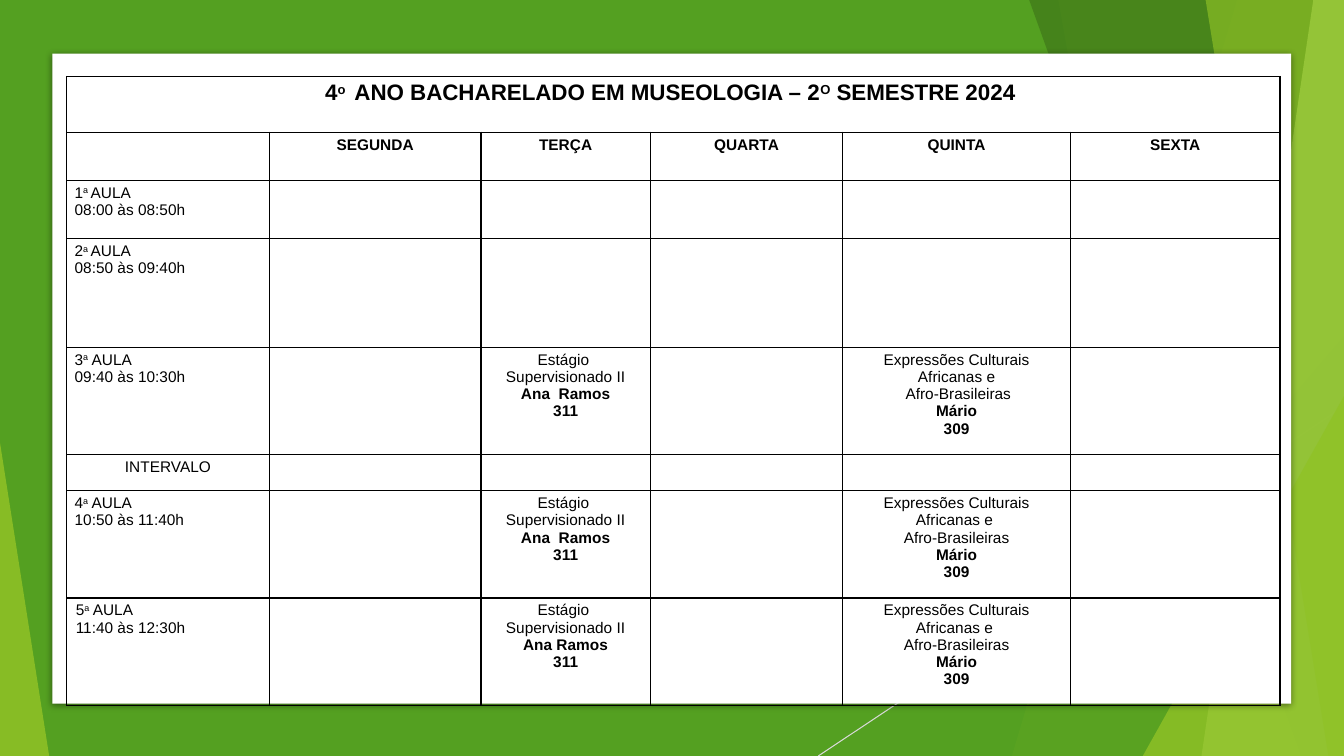
from dataclasses import dataclass

from lxml import etree
from pptx import Presentation
from pptx.dml.color import RGBColor
from pptx.enum.shapes import MSO_CONNECTOR, MSO_SHAPE
from pptx.enum.text import PP_ALIGN
from pptx.oxml.ns import qn
from pptx.util import Cm, Pt

STRAIGHT = MSO_CONNECTOR.STRAIGHT
RECTANGLE = MSO_SHAPE.RECTANGLE
TRIANGLE = MSO_SHAPE.ISOSCELES_TRIANGLE
LEFT = PP_ALIGN.LEFT
CENTER = PP_ALIGN.CENTER

WIDTH, HEIGHT = 33.87, 19.05
BLANK_LAYOUT = 6


@dataclass(frozen=True)
class Theme:
    font: str = "Arial"
    black: str = "000000"
    white: str = "FFFFFF"
    green: str = "54A021"
    lime: str = "90C226"
    dark_green: str = "3F7819"
    pale_lime: str = "C0E474"
    grey: str = "D9D9D9"
    title_size: float = 16
    text_size: float = 11
    hairline: float = 0.75
    border: float = 1


THEME = Theme()

COLUMN_WIDTHS = (5.11, 5.33, 4.27, 4.85, 5.74, 5.28)
ROW_HEIGHTS = (1.4, 1.22, 1.47, 2.74, 2.7, 0.91, 2.7, 2.7)
TITLE = "4^o ^ ANO BACHARELADO EM MUSEOLOGIA – 2^O^ SEMESTRE 2024 "
DAYS = ("SEGUNDA", "TERÇA", "QUARTA", "QUINTA", "SEXTA")
PERIODS = {
    2: ("1^a ^AULA", "08:00 às 08:50h"),
    3: ("2^a ^AULA", "08:50 às 09:40h"),
    4: ("3^a^ AULA", "09:40 às 10:30h"),
    6: ("4^a^ AULA", "10:50 às 11:40h"),
    7: ("5^a^ AULA", "11:40 às 12:30h"),
}
BREAK_ROW = 5
TUESDAY, THURSDAY = 2, 4
INTERNSHIP = ("Estágio ", "Supervisionado II")
INTERNSHIP_STAFF = {4: "Ana  Ramos", 6: "Ana  Ramos", 7: "Ana Ramos"}
CULTURES = ("Expressões Culturais Africanas e ", "Afro-Brasileiras")
CULTURES_FIRST = ("Expressões Culturais Africanas e", " Afro-Brasileiras")

FACETS = (
    (31.19, 25.5, THEME.lime, 30),
    (26.67, 30.05, THEME.lime, 20),
    (24.82, 8.46, 9.05, 10.59, 1, THEME.green, 72),
    (25.93, 32.79, THEME.dark_green, 70),
    (33.1, 30.28, THEME.pale_lime, 70),
    (30.38, 33.48, THEME.lime, 65),
    (28.8, 9.98, 5.07, 9.07, 1, THEME.lime, 80),
    (0, 11.15, 1.24, 7.9, 0, THEME.lime, 85),
)


def write(paragraph, text, size=THEME.text_size, bold=False, color=THEME.black, align=CENTER):
    paragraph.alignment = align
    for position, piece in enumerate(text.split("^")):
        if not piece:
            continue
        run = paragraph.add_run()
        run.text = piece
        run.font.name = THEME.font
        run.font.size = Pt(size)
        run.font.bold = bold
        run.font.color.rgb = RGBColor.from_string(color)
        if position % 2:
            run._r.get_or_add_rPr().set("baseline", "30000")
    if not text:
        etree.SubElement(paragraph._p, qn("a:endParaRPr"), sz=str(int(size * 100)))


class SlideBuilder:
    def __init__(self, slide, theme):
        self.slide = slide
        self.theme = theme

    def paint(self, shape, color, opacity=100):
        shape.shadow.inherit = False
        shape.fill.solid()
        shape.fill.fore_color.rgb = RGBColor.from_string(color)
        shape.line.fill.background()
        if opacity < 100:
            tint = shape._element.spPr.find(f".//{qn('a:srgbClr')}")
            etree.SubElement(tint, qn("a:alpha"), val=str(opacity * 1000))
        return shape

    def box(self, kind, left, top, width, height, color, opacity=100):
        shape = self.slide.shapes.add_shape(kind, Cm(left), Cm(top), Cm(width), Cm(height))
        return self.paint(shape, color, opacity)

    def triangle(self, left, top, width, height, apex, color, opacity):
        shape = self.box(TRIANGLE, left, top, width, height, color, opacity)
        shape.adjustments[0] = apex

    def band(self, top_left, bottom_left, color, opacity):
        top = Cm(-0.02)
        builder = self.slide.shapes.build_freeform(Cm(top_left), top)
        corners = ((Cm(WIDTH), top), (Cm(WIDTH), Cm(HEIGHT)), (Cm(bottom_left), Cm(HEIGHT)))
        builder.add_line_segments(corners, close=True)
        self.paint(builder.convert_to_shape(), color, opacity)

    def line(self, start, end):
        ends = [Cm(value) for value in (*start, *end)]
        connector = self.slide.shapes.add_connector(STRAIGHT, *ends)
        connector.line.color.rgb = RGBColor.from_string(self.theme.grey)
        connector.line.width = Pt(self.theme.hairline)
        etree.SubElement(connector._element.spPr, qn("a:effectLst"))

    def card(self, left, top, width, height):
        shape = self.box(RECTANGLE, left, top, width, height, self.theme.white)
        effects = shape._element.spPr.find(qn("a:effectLst"))
        shadow = etree.SubElement(effects, qn("a:outerShdw"), blurRad=str(Pt(5)),
                                  dist=str(Pt(1.4)), dir="5400000", rotWithShape="0")
        tint = etree.SubElement(shadow, qn("a:srgbClr"), val=self.theme.black)
        etree.SubElement(tint, qn("a:alpha"), val="43000")

    def table(self, left, top):
        frame = self.slide.shapes.add_table(
            len(ROW_HEIGHTS), len(COLUMN_WIDTHS), Cm(left), Cm(top),
            Cm(sum(COLUMN_WIDTHS)), Cm(sum(ROW_HEIGHTS)))
        table = frame.table
        table.first_row = table.horz_banding = False
        for column, width in zip(table.columns, COLUMN_WIDTHS):
            column.width = Cm(width)
        for row, height in zip(table.rows, ROW_HEIGHTS):
            row.height = Cm(height)
        return table

    def cell(self, cell, lines, inset, **style):
        cell.margin_left = cell.margin_right = Cm(inset)
        cell.margin_top = cell.margin_bottom = Cm(0.1)
        cell.fill.background()
        properties = cell._tc.get_or_add_tcPr()
        for position, side in enumerate(("lnL", "lnR", "lnT", "lnB")):
            border = etree.Element(qn(f"a:{side}"), w=str(Pt(self.theme.border)))
            fill = etree.SubElement(border, qn("a:solidFill"))
            etree.SubElement(fill, qn("a:srgbClr"), val=self.theme.black)
            properties.insert(position, border)
        text_frame = cell.text_frame
        for position, (text, bold) in enumerate(lines):
            paragraph = text_frame.add_paragraph() if position else text_frame.paragraphs[0]
            write(paragraph, text, bold=bold, **style)


def timetable_lines():
    contents = {(0, 0): [(TITLE, True)], (BREAK_ROW, 0): [("INTERVALO", False)]}
    for column, day in enumerate(DAYS, start=1):
        contents[1, column] = [(day, True)]
    for row, period in PERIODS.items():
        contents[row, 0] = [(text, False) for text in period]
    for row, teacher in INTERNSHIP_STAFF.items():
        cultures = CULTURES_FIRST if row == 4 else CULTURES
        for column, subject, staff in ((TUESDAY, INTERNSHIP, (teacher, "311")),
                                       (THURSDAY, cultures, ("Mário", "309"))):
            contents[row, column] = ([(text, False) for text in subject]
                                     + [(text, True) for text in staff])
    return contents


def main():
    presentation = Presentation()
    presentation.slide_width, presentation.slide_height = Cm(WIDTH), Cm(HEIGHT)
    slide = presentation.slides.add_slide(presentation.slide_layouts[BLANK_LAYOUT])
    builder = SlideBuilder(slide, THEME)

    builder.box(RECTANGLE, 0, 0, WIDTH, HEIGHT, THEME.green)
    builder.line((WIDTH, 10.24), (20.62, HEIGHT))
    for facet in FACETS:
        draw = builder.band if len(facet) == 4 else builder.triangle
        draw(*facet)
    builder.card(1.32, 1.35, 31.22, 16.38)

    table = builder.table(1.68, 1.93)
    contents = timetable_lines()
    for row in range(len(ROW_HEIGHTS)):
        for column in range(len(COLUMN_WIDTHS)):
            lines = contents.get((row, column), [("", False)])
            inset = 0.2 if column == 0 and 2 <= row <= 6 else 0.23
            align = LEFT if column == 0 and row in PERIODS else CENTER
            size = THEME.title_size if row == 0 else THEME.text_size
            builder.cell(table.cell(row, column), lines, inset, size=size, align=align)
    table.cell(0, 0).merge(table.cell(0, len(COLUMN_WIDTHS) - 1))

    presentation.save("out.pptx")


if __name__ == "__main__":
    main()
